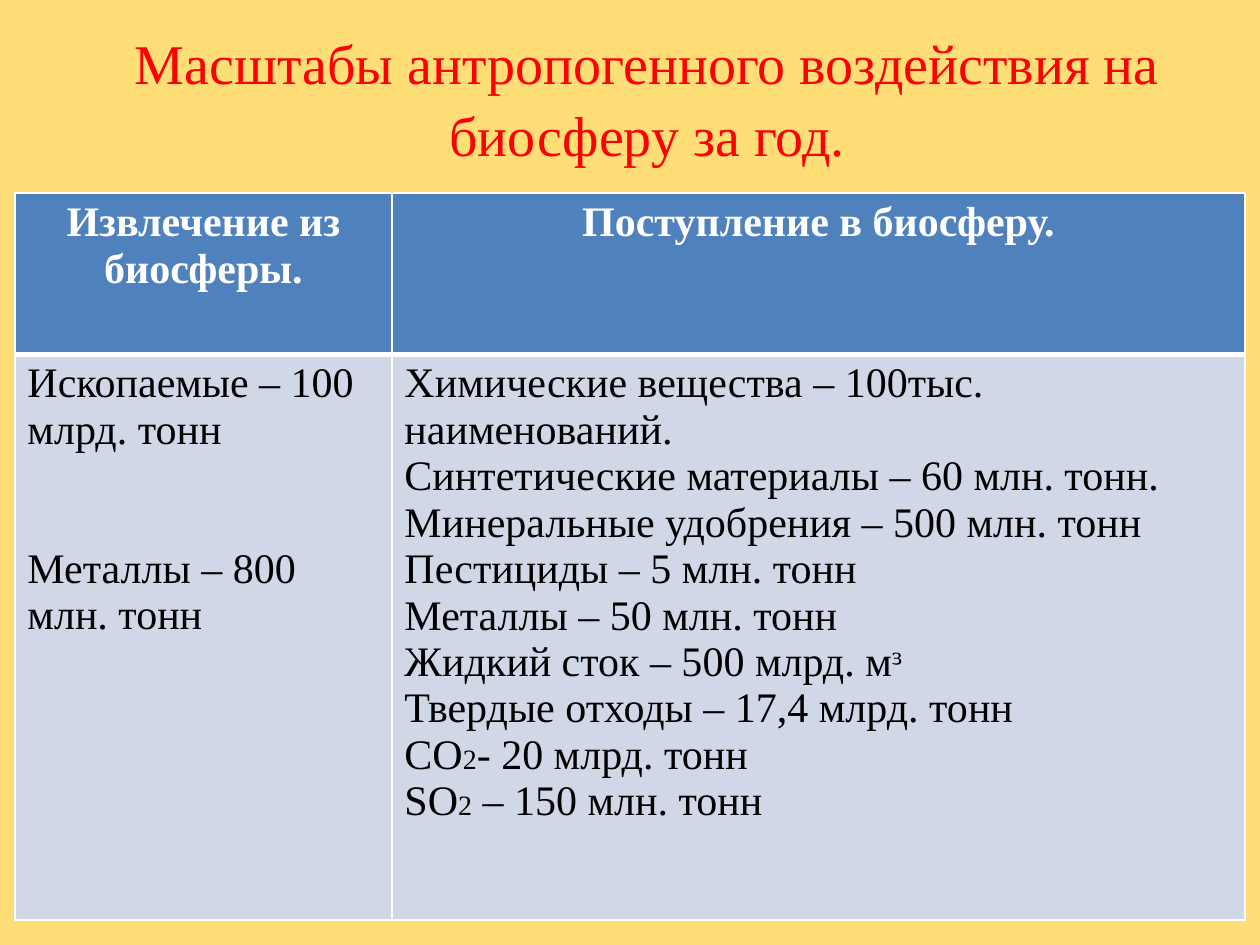
from lxml import etree
from pptx import Presentation
from pptx.dml.color import RGBColor
from pptx.enum.text import MSO_ANCHOR, MSO_AUTO_SIZE, PP_ALIGN
from pptx.oxml.ns import qn
from pptx.util import Cm, Pt

CENTER, LEFT = PP_ALIGN.CENTER, PP_ALIGN.LEFT
TOP = MSO_ANCHOR.TOP
TITLE_ONLY = 5
FONT = "Times New Roman"
COLORS = {
    "background": "FFDE78",
    "title": "FF0000",
    "header": "4F81BD",
    "body": "D0D8E8",
    "border": "FFFFFF",
    "header_text": "FFFFFF",
    "body_text": "000000",
}

EXTRACTION = [["Ископаемые – 100 млрд. тонн"], ["Металлы – 800 млн. тонн"]]
# Every second piece of a line is a small index.
EMISSIONS = [
    ["Химические вещества – 100тыс. наименований."],
    ["Синтетические материалы – 60 млн. тонн."],
    ["Минеральные удобрения – 500 млн. тонн"],
    ["Пестициды – 5 млн. тонн"],
    ["Металлы – 50 млн. тонн"],
    ["Жидкий сток – 500 млрд. мᶟ"],
    ["Твердые отходы – 17,4 млрд. тонн"],
    ["СО", "2", "- 20 млрд. тонн"],
    ["SO", "2", " – 150 млн. тонн"],
]
ROWS = [
    [[["Извлечение из биосферы."]], [["Поступление в биосферу."]]],
    [EXTRACTION, EMISSIONS],
]


def add_span(para, text, color, **formats):
    span = para.add_run()
    span.text = text
    span.font.color.rgb = RGBColor.from_string(COLORS[color])
    for name, value in {"name": FONT, **formats}.items():
        setattr(span.font, name, value)


def add_border(cell, side, width):
    line = etree.SubElement(cell._tc.get_or_add_tcPr(), qn(f"a:ln{side}"), w=str(Pt(width)))
    fill = etree.SubElement(line, qn("a:solidFill"))
    etree.SubElement(fill, qn("a:srgbClr"), val=COLORS["border"])


deck = Presentation()
deck.slide_width, deck.slide_height = Cm(25.4), Cm(19.05)
page = deck.slides.add_slide(deck.slide_layouts[TITLE_ONLY])
page.background.fill.solid()
page.background.fill.fore_color.rgb = RGBColor.from_string(COLORS["background"])

# Title
title = page.shapes.title
title.left, title.top, title.width, title.height = Cm(0.7), Cm(0.33), Cm(24.7), Cm(3)
title.text_frame.auto_size = MSO_AUTO_SIZE.NONE
title.text_frame.vertical_anchor = TOP
para = title.text_frame.paragraphs[0]
para.alignment = CENTER
para.line_spacing = 1.08
add_span(para, "Масштабы антропогенного воздействия на биосферу за год.", "title", size=Pt(32))

# Table
table = page.shapes.add_table(2, 2, Cm(0.3), Cm(3.89), Cm(24.8), Cm(14.66)).table
for column, width in zip(table.columns, (7.6, 17.2)):
    column.width = Cm(width)
for row, height in zip(table.rows, (3.25, 11.41)):
    row.height = Cm(height)

for row_index, (kind, row) in enumerate(zip(("header", "body"), ROWS)):
    is_header = kind == "header"
    for column_index, lines in enumerate(row):
        cell = table.cell(row_index, column_index)
        for side in "LRTB":
            at_header_edge = side == ("B" if is_header else "T")
            add_border(cell, side, 3 if at_header_edge else 1)
        cell.fill.solid()
        cell.fill.fore_color.rgb = RGBColor.from_string(COLORS[kind])
        cell.vertical_anchor = TOP
        frame = cell.text_frame
        for line_index, pieces in enumerate(lines):
            para = frame.add_paragraph() if line_index else frame.paragraphs[0]
            para.alignment = CENTER if is_header else LEFT
            if lines is EXTRACTION and line_index:
                para.space_before = Pt(53)
            for piece_index, piece in enumerate(pieces):
                size = Pt(16 if piece_index % 2 else 24)
                add_span(para, piece, f"{kind}_text", size=size, bold=is_header)

deck.save("out.pptx")
